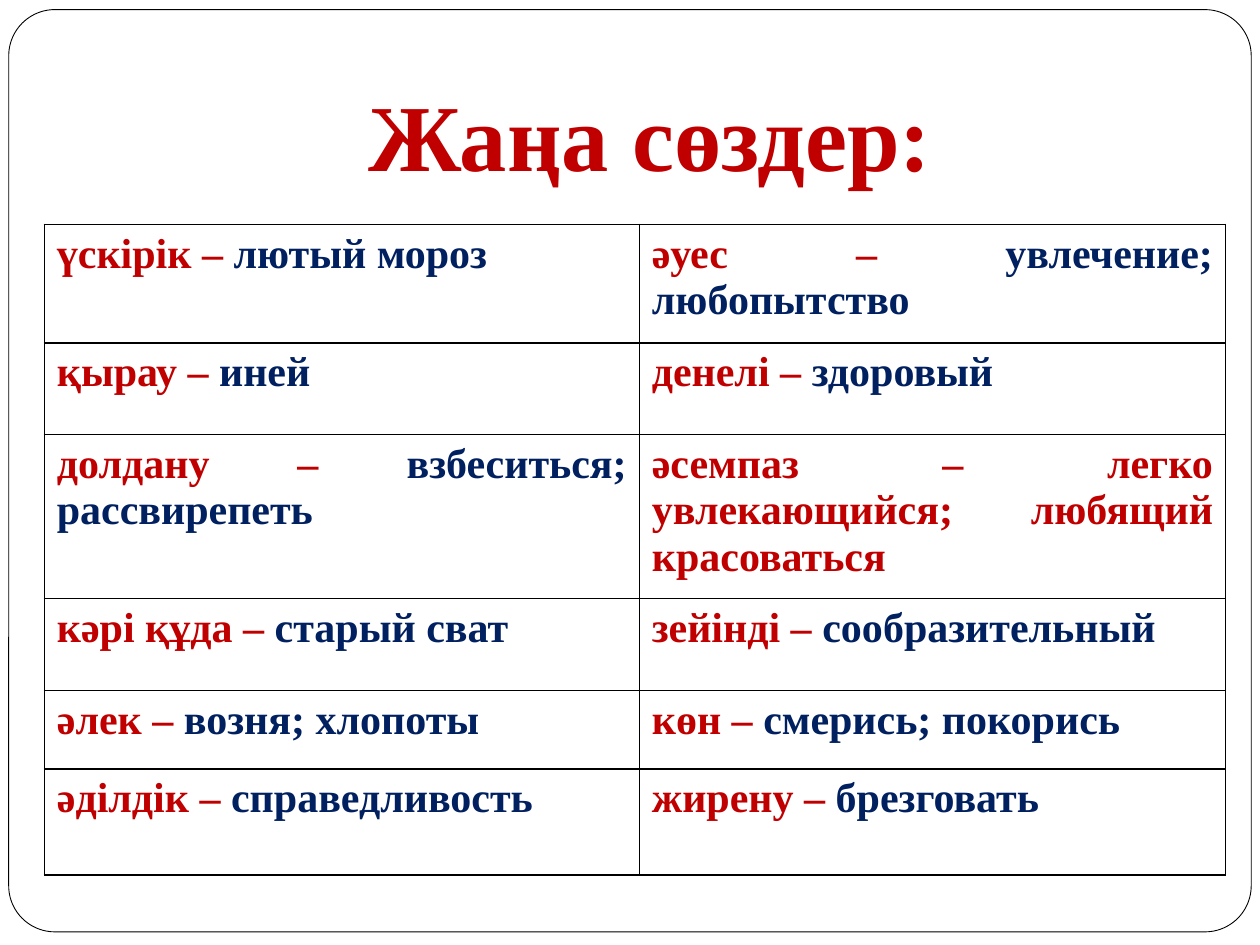
from dataclasses import dataclass

from lxml.etree import SubElement
from pptx import Presentation
from pptx.dml.color import RGBColor
from pptx.enum.shapes import MSO_SHAPE
from pptx.enum.text import MSO_ANCHOR, PP_ALIGN
from pptx.oxml.ns import qn
from pptx.util import Pt


@dataclass(frozen=True)
class Theme:
    font: str = "Times New Roman"
    red: str = "C00000"
    navy: str = "002060"
    black: str = "000000"
    white: str = "FFFFFF"
    head: int = 54
    body: int = 24


theme = Theme()


def add_run(para, text, size, color):
    run = para.add_run()
    run.text = text
    run.font.name = theme.font
    run.font.size = Pt(size)
    run.font.bold = True
    run.font.color.rgb = RGBColor.from_string(color)


def add_grid(cell):
    """Draw a thin black line on all four sides of the cell."""
    props = cell._tc.get_or_add_tcPr()
    for at, side in enumerate(("lnL", "lnR", "lnT", "lnB")):
        line = SubElement(props, qn(f"a:{side}"), w=str(Pt(1)))
        fill = SubElement(line, qn("a:solidFill"))
        SubElement(fill, qn("a:srgbClr"), val=theme.black)
        props.insert(at, line)


deck = Presentation()
deck.slide_width, deck.slide_height = Pt(720), Pt(540)
slide = deck.slides.add_slide(deck.slide_layouts[6])
shapes = slide.shapes

# Frame
frame = shapes.add_shape(
    MSO_SHAPE.ROUNDED_RECTANGLE, Pt(5), Pt(5.5), Pt(710), Pt(527))
frame.adjustments[0] = 0.05
frame.shadow.inherit = False
frame.fill.solid()
frame.fill.fore_color.rgb = RGBColor.from_string(theme.white)
frame.line.color.rgb = RGBColor.from_string(theme.black)
frame.line.width = Pt(0.5)

# Title
title = shapes.add_textbox(Pt(65.5), Pt(26), Pt(612), Pt(90)).text_frame
title.word_wrap = True
title.vertical_anchor = MSO_ANCHOR.BOTTOM
title.margin_bottom = Pt(7.2)
para = title.paragraphs[0]
para.alignment = PP_ALIGN.CENTER
add_run(para, "Жаңа сөздер:", theme.head, theme.red)

# Word list: each cell holds a red part and a navy part
words = [
    [("үскірік – ", "лютый мороз"),
     ("әуес – ", "увлечение; любопытство")],
    [("қырау – ", "иней"), ("денелі – ", "здоровый")],
    [("долдану – ", "взбеситься; рассвирепеть"),
     ("әсемпаз – легко увлекающийся; любящий красоваться", "")],
    [("кәрі құда – ", "старый сват"), ("зейінді – ", "сообразительный")],
    [("әлек – ", "возня; хлопоты"), ("көн – ", "смерись; покорись")],
    [("әділдік – ", "справедливость"), ("жирену – ", "брезговать")],
]
widths = [340, 335]
heights = [67.7, 52.5, 90, 52.5, 45, 60.5]

table = shapes.add_table(
    len(words), len(widths), Pt(25.3), Pt(128.2),
    Pt(sum(widths)), Pt(sum(heights))).table
table.first_row = table.horz_banding = False
for col, width in zip(table.columns, widths):
    col.width = Pt(width)
for row, height, pairs in zip(table.rows, heights, words):
    row.height = Pt(height)
    for cell, pair in zip(row.cells, pairs):
        cell.fill.background()
        add_grid(cell)
        para = cell.text_frame.paragraphs[0]
        para.alignment = PP_ALIGN.JUSTIFY
        for text, color in zip(pair, (theme.red, theme.navy)):
            if text:
                add_run(para, text, theme.body, color)

deck.save("out.pptx")
